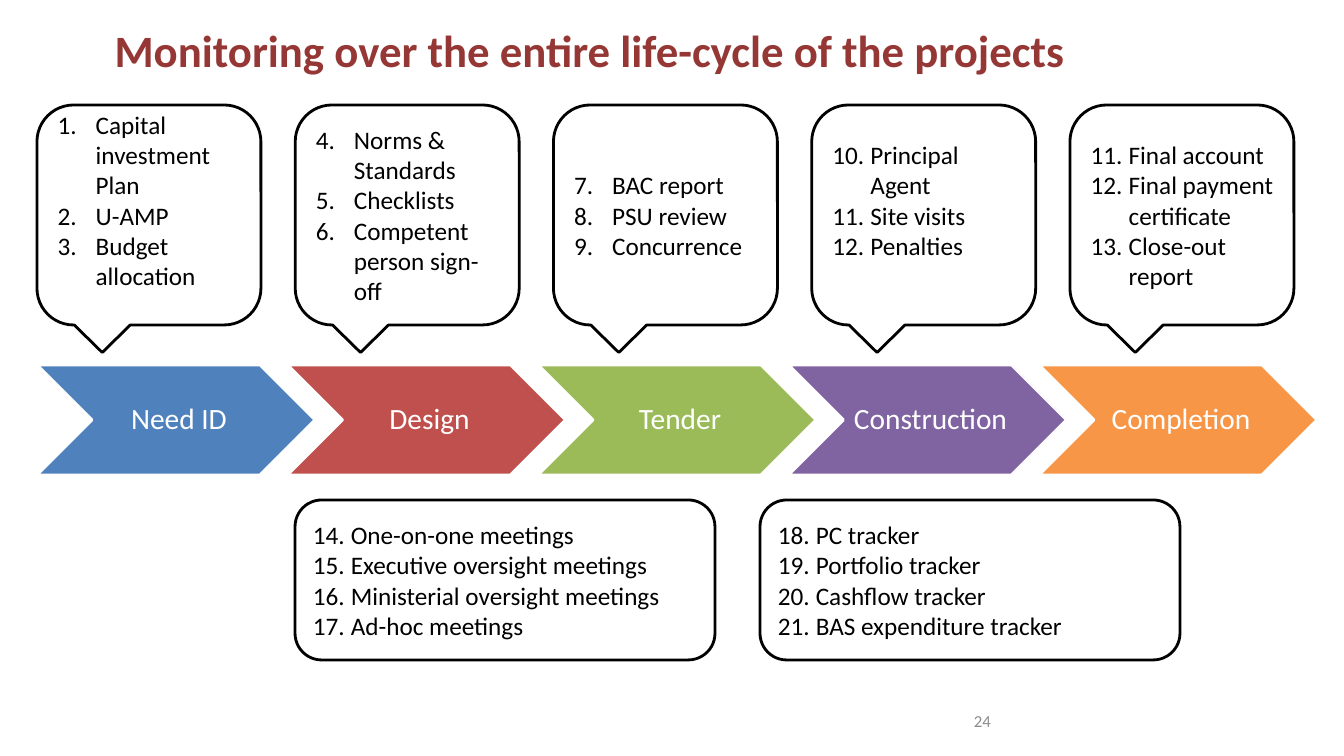
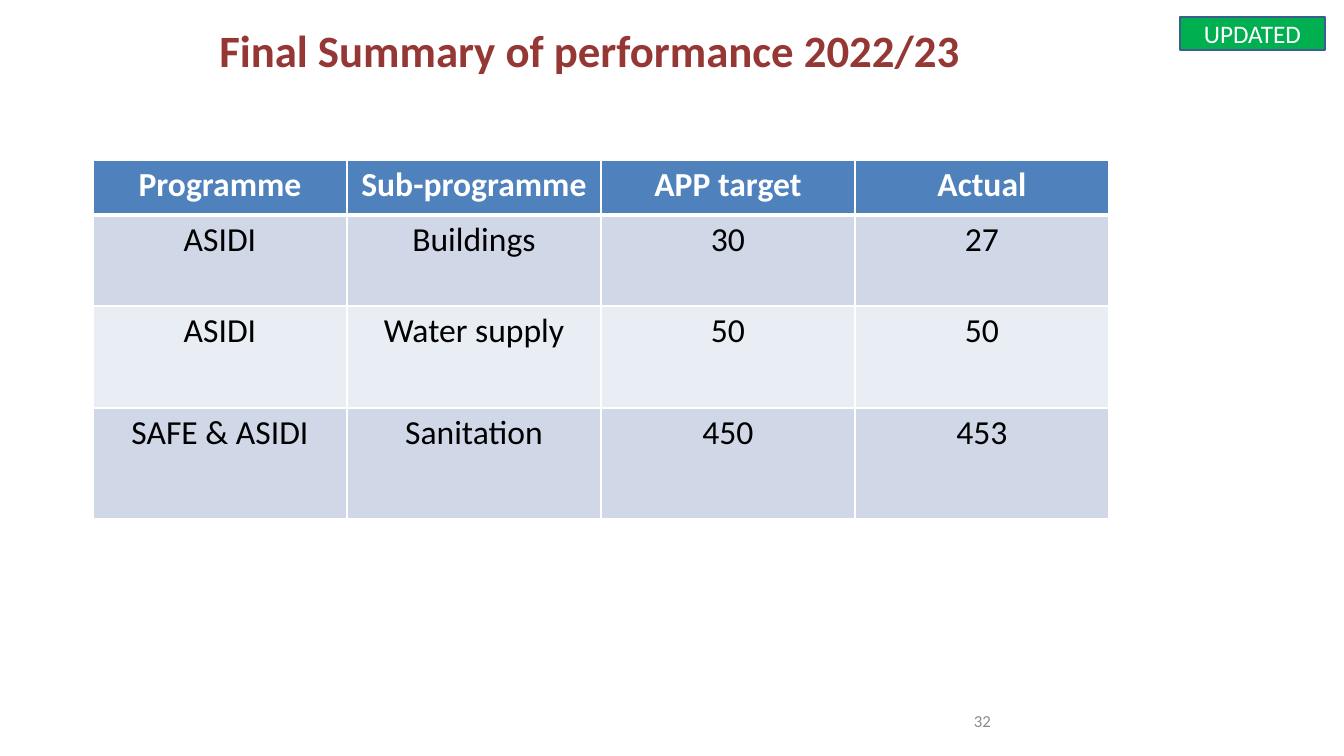
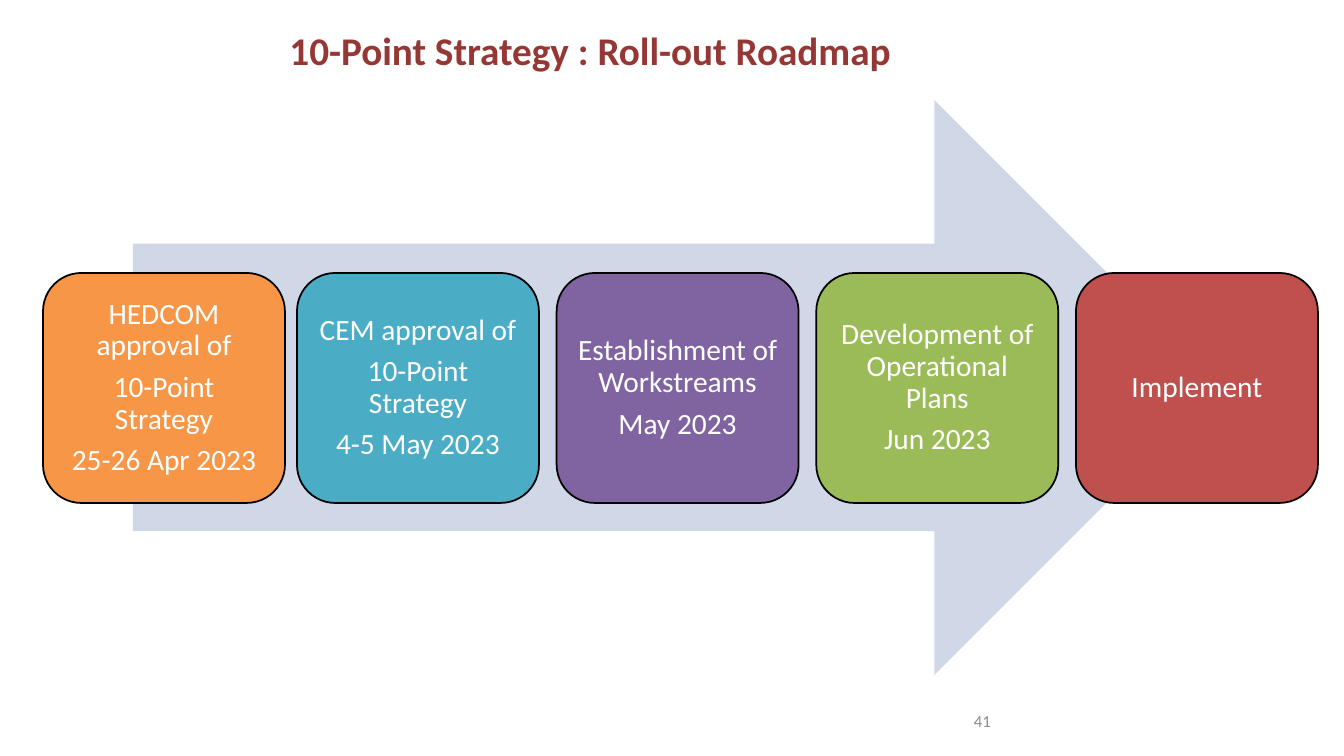
from lxml import etree
from pptx import Presentation
from pptx.dml.color import RGBColor
from pptx.enum.shapes import MSO_SHAPE
from pptx.enum.text import MSO_ANCHOR, PP_ALIGN
from pptx.oxml.ns import qn
from pptx.util import Emu, Pt

CALLOUT = MSO_SHAPE.ROUNDED_RECTANGULAR_CALLOUT
CHEVRON = MSO_SHAPE.CHEVRON
ROUNDED = MSO_SHAPE.ROUNDED_RECTANGLE
RECTANGLE = MSO_SHAPE.RECTANGLE
ARROW = MSO_SHAPE.RIGHT_ARROW
LEFT, CENTER = PP_ALIGN.LEFT, PP_ALIGN.CENTER
TOP, MIDDLE = MSO_ANCHOR.TOP, MSO_ANCHOR.MIDDLE

EMU_PER_PX = 914400 / 100.8
FONT = "Calibri"
WHITE, BLACK, MAROON, GREY = "FFFFFF", "000000", "953735", "8C8C8C"
BLUE, RED, LIME, PURPLE = "4F81BD", "C0504D", "9BBB59", "8064A2"
TEAL, ORANGE, GREEN, NAVY = "4BACC6", "F79646", "00B050", "3A5F8C"
PALE, PALER = "D0D8E8", "E9EDF4"
INSETS = (10, 5, 10, 5)
NUMBER_INDENT = 38
LINE_OF_18PT = 30

LIFE_CYCLE = "Monitoring over the entire life-cycle of the projects"
STAGES = [
    ("Need ID", BLUE, 1, ["Capital investment Plan", "U-AMP", "Budget allocation"], LINE_OF_18PT),
    ("Design", RED, 4, ["Norms & Standards", "Checklists", "Competent person sign-off"], 0),
    ("Tender", LIME, 7, ["BAC report", "PSU review", "Concurrence"], 0),
    ("Construction", PURPLE, 10, ["Principal Agent", "Site visits", "Penalties"], LINE_OF_18PT),
    ("Completion", ORANGE, 11, ["Final account", "Final payment certificate", "Close-out report"], 0),
]
OVERSIGHT = [
    (14, ["One-on-one meetings", "Executive oversight meetings",
          "Ministerial oversight meetings", "Ad-hoc meetings"]),
    (18, ["PC tracker", "Portfolio tracker", "Cashflow tracker", "BAS expenditure tracker"]),
]

SUMMARY = "Final Summary of performance 2022/23"
PERFORMANCE = [
    ("Programme", "Sub-programme", "APP target", "Actual"),
    ("ASIDI", "Buildings", "30", "27"),
    ("ASIDI", "Water supply", "50", "50"),
    ("SAFE & ASIDI", "Sanitation", "450", "453"),
]
ROW_HEIGHTS = [55, 91, 102, 111]
ROW_FILLS = [BLUE, PALE, PALER, PALE]
COLUMN_WIDTH = 254

ROADMAP = "10-Point Strategy : Roll-out Roadmap"
MILESTONES = [
    (["HEDCOM approval of", "10-Point Strategy", "25-26 Apr 2023"], ORANGE),
    (["CEM approval of", "10-Point Strategy", "4-5 May 2023"], TEAL),
    (["Establishment of Workstreams", "May 2023"], PURPLE),
    (["Development of Operational Plans", "Jun 2023"], LIME),
    (["Implement"], RED),
]


def px(length):
    return Emu(round(length * EMU_PER_PX))


def color(value):
    return RGBColor.from_string(value)


def spread(first, last, count):
    return [first + i * (last - first) / (count - 1) for i in range(count)]


def write(frame, lines, size, ink, align=LEFT, bold=False, anchor=MIDDLE,
          insets=INSETS, start=None, spacing=None, after=None):
    frame.word_wrap = True
    frame.vertical_anchor = anchor
    frame.margin_left, frame.margin_top, frame.margin_right, frame.margin_bottom = map(px, insets)
    for i, line in enumerate(lines):
        paragraph = frame.add_paragraph() if i else frame.paragraphs[0]
        paragraph.alignment = align
        if spacing:
            paragraph.line_spacing = spacing
        if after:
            paragraph.space_after = Pt(after)
        if start:
            number_paragraph(paragraph, start)
        run = paragraph.add_run()
        run.text = line
        run.font.name, run.font.size, run.font.bold = FONT, Pt(size), bold
        run.font.color.rgb = color(ink)


def number_paragraph(paragraph, start):
    properties = paragraph._p.get_or_add_pPr()
    properties.set("marL", str(px(NUMBER_INDENT)))
    properties.set("indent", str(-px(NUMBER_INDENT)))
    numbering = etree.SubElement(properties, qn("a:buAutoNum"), type="arabicPeriod")
    numbering.set("startAt", str(start))


def add_box(slide, preset, box, fill=None, line=None, width=2):
    shape = slide.shapes.add_shape(preset, *map(px, box))
    shape.shadow.inherit = False
    if fill:
        shape.fill.solid()
        shape.fill.fore_color.rgb = color(fill)
    else:
        shape.fill.background()
    if line:
        shape.line.color.rgb = color(line)
        shape.line.width = Pt(width)
    else:
        shape.line.fill.background()
    return shape


def add_text(slide, box, text, size, ink, **style):
    frame = slide.shapes.add_textbox(*map(px, box)).text_frame
    write(frame, [text], size, ink, **style)


def add_slide(deck, title, number, title_size=32):
    slide = deck.slides.add_slide(deck.slide_layouts[6])
    add_text(slide, (0, 0, 1180, 100), title, title_size, MAROON, align=CENTER, bold=True)
    add_text(slide, (964, 701, 313, 40), number, 12, GREY)
    return slide


def border_cell(cell, top, bottom):
    properties = cell._tc.get_or_add_tcPr()
    for i, (side, width) in enumerate([("L", 1), ("R", 1), ("T", top), ("B", bottom)]):
        edge = etree.Element(qn(f"a:ln{side}"), w=str(Pt(width)))
        fill = etree.SubElement(edge, qn("a:solidFill"))
        etree.SubElement(fill, qn("a:srgbClr"), val=WHITE)
        properties.insert(i, edge)


def build_life_cycle(deck):
    slide = add_slide(deck, LIFE_CYCLE, "24")
    callout_lefts = spread(37, 1070, len(STAGES))
    chevron_lefts = spread(37, 1039, len(STAGES))
    for (stage, fill, start, controls, lift), callout_x, chevron_x in zip(
            STAGES, callout_lefts, chevron_lefts):
        callout = add_box(slide, CALLOUT, (callout_x, 105, 224, 220), line=BLACK)
        write(callout.text_frame, controls, 18, BLACK, start=start, insets=(10, 5, 10, 5 + lift))
        chevron = add_box(slide, CHEVRON, (chevron_x, 365, 278, 110), fill, WHITE)
        write(chevron.text_frame, [stage], 21, WHITE, align=CENTER, insets=(9, 3, 3, 3), spacing=0.9)
    for (start, controls), left in zip(OVERSIGHT, (295, 760)):
        panel = add_box(slide, CALLOUT, (left, 500, 420, 160), line=BLACK)
        panel.adjustments[0], panel.adjustments[1] = -0.14, 0.5
        write(panel.text_frame, controls, 18, BLACK, start=start)


def build_summary(deck):
    slide = add_slide(deck, SUMMARY, "32")
    columns = len(PERFORMANCE[0])
    table = slide.shapes.add_table(
        len(PERFORMANCE), columns, px(93), px(160),
        px(COLUMN_WIDTH * columns), px(sum(ROW_HEIGHTS))).table
    for column in table.columns:
        column.width = px(COLUMN_WIDTH)
    for r, values in enumerate(PERFORMANCE):
        table.rows[r].height = px(ROW_HEIGHTS[r])
        header = r == 0
        for c, value in enumerate(values):
            cell = table.cell(r, c)
            cell.fill.solid()
            cell.fill.fore_color.rgb = color(ROW_FILLS[r])
            border_cell(cell, 3 if r == 1 else 1, 3 if header else 1)
            write(cell.text_frame, [value], 24, WHITE if header else BLACK,
                  align=CENTER, bold=header, anchor=TOP)
    badge = add_box(slide, RECTANGLE, (1180, 17, 145, 33), GREEN, NAVY)
    write(badge.text_frame, ["UPDATED"], 18, WHITE, align=CENTER)


def build_roadmap(deck):
    slide = add_slide(deck, ROADMAP, "41", title_size=28)
    add_box(slide, ARROW, (133, 100, 1089, 575), PALE)
    lefts = [43, *spread(297, 1076, len(MILESTONES) - 1)]
    for (lines, fill), left in zip(MILESTONES, lefts):
        milestone = add_box(slide, ROUNDED, (left, 273, 242, 230), fill, BLACK, 1.25)
        write(milestone.text_frame, lines, 21, WHITE, align=CENTER,
              insets=(9, 9, 9, 9), spacing=0.9, after=7)


def main():
    deck = Presentation()
    deck.slide_width, deck.slide_height = px(1344), px(756)
    build_life_cycle(deck)
    build_summary(deck)
    build_roadmap(deck)
    deck.save("out.pptx")


if __name__ == "__main__":
    main()
